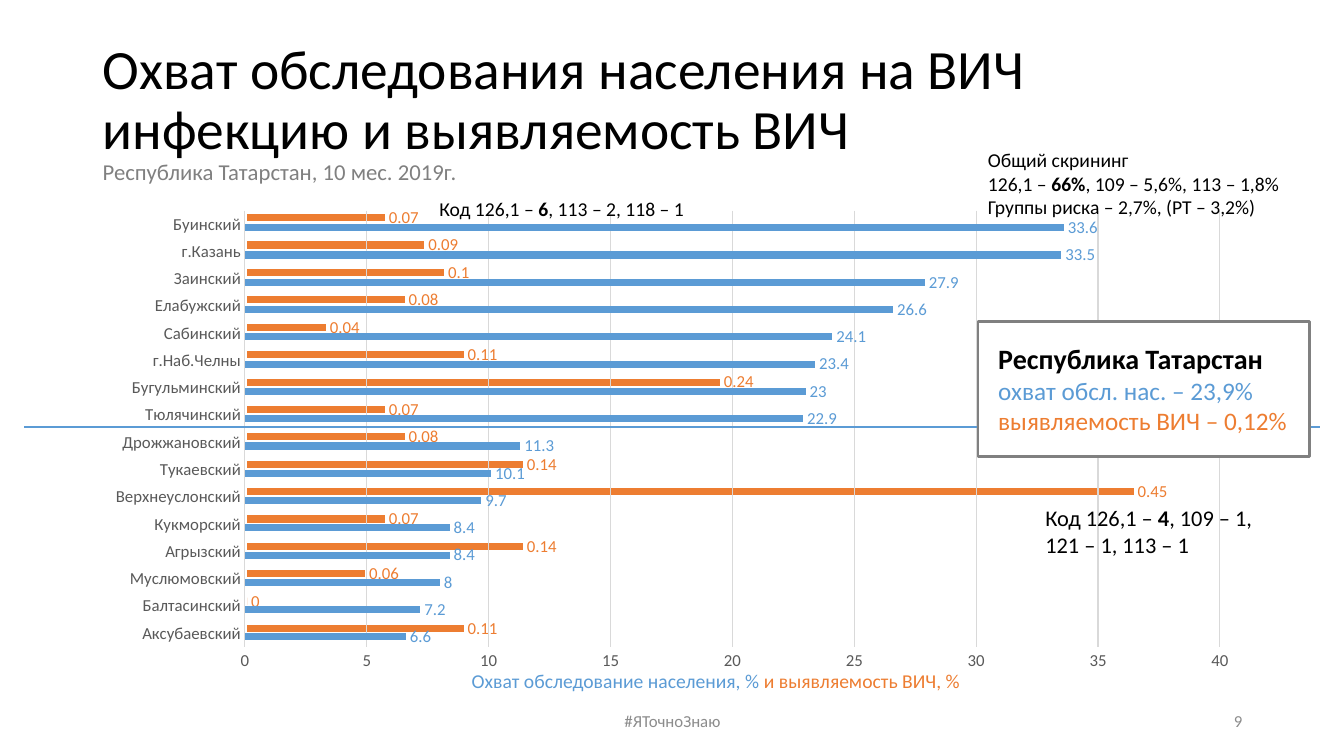
import pptx
import pptx.chart.data
import pptx.dml.color
import pptx.enum.chart
import pptx.enum.shapes
import pptx.enum.text
import pptx.oxml
import pptx.oxml.ns
import pptx.util
from pptx.util import Inches, Pt

FONT = "Calibri"
COLORS = {"black": "000000", "white": "FFFFFF", "blue": "5B9BD5", "orange": "ED7D31",
          "gray": "808080", "footer": "8C8C8C", "axis": "595959", "grid": "D9D9D9"}

# District, coverage of testing (%), detection of HIV (%); bottom to top
DISTRICTS = [
    ("Аксубаевский", 6.6, 0.11), ("Балтасинский", 7.2, 0), ("Муслюмовский", 8, 0.06),
    ("Агрызский", 8.4, 0.14), ("Кукморский", 8.4, 0.07), ("Верхнеуслонский", 9.7, 0.45),
    ("Тукаевский", 10.1, 0.14), ("Дрожжановский", 11.3, 0.08), ("Тюлячинский", 22.9, 0.07),
    ("Бугульминский", 23, 0.24), ("г.Наб.Челны", 23.4, 0.11), ("Сабинский", 24.1, 0.04),
    ("Елабужский", 26.6, 0.08), ("Заинский", 27.9, 0.1), ("г.Казань", 33.5, 0.09),
    ("Буинский", 33.6, 0.07),
]

# Paragraphs are lists of runs: (text, format that differs from the box)
TITLE = [[("Охват обследования населения на ВИЧ инфекцию и выявляемость ВИЧ\v", {}),
          ("Республика Татарстан, 10 мес. 2019г.", {"size": 16.2, "color": "gray"})]]
AXIS_TITLE = [[("Охват обследование населения, % ", {"color": "blue"}),
               ("и выявляемость ВИЧ, %", {"color": "orange"})]]
REPUBLIC = [[("Республика Татарстан", {"size": 20, "bold": True})],
            [("охват обсл. нас. – 23,9%", {"color": "blue"})],
            [("выявляемость ВИЧ – 0,12%", {"color": "orange"})]]
CODES_LOW = [[("Код 126,1 – ", {}), ("4", {"bold": True}), (", 109 – 1, 121 – 1, 113 – 1", {})]]
CODES_TOP = [[("Код 126,1 – ", {}), ("6", {"bold": True}), (", 113 – 2, 118 – 1", {})]]
SCREENING = [[("Общий скрининг", {})],
             [("126,1 – ", {}), ("66%", {"bold": True}), (", 109 – 5,6%, 113 – 1,8%", {})],
             [("Группы риска – 2,7%, (РТ – 3,2%)", {})]]

# Boxes are left, top, width, height in inches
DETECTION_AT, DETECTION_PLOT = (2.25, 1.97, 10.17, 4.52), (2.45, 2.06, 9.77, 4.35)
COVERAGE_AT, COVERAGE_PLOT = (0.92, 2, 11.5, 4.76), (2.43, 2.09, 9.67, 4.33)


def rgb(name):
    return pptx.dml.color.RGBColor.from_string(COLORS[name])


def set_font(font, size, color, bold=False):
    font.name, font.size, font.bold = FONT, Pt(size), bold
    font.color.rgb = rgb(color)


def write(tf, text, size=14, color="black", bold=False, align="LEFT", anchor="TOP",
          wrap=True, spacing=None, inset=None):
    """Fill a text frame with a string or a list of paragraphs of runs."""
    tf.word_wrap = wrap
    tf.vertical_anchor = getattr(pptx.enum.text.MSO_ANCHOR, anchor)
    if inset is not None:
        tf.margin_left = tf.margin_right = tf.margin_top = tf.margin_bottom = Inches(inset)
    paragraphs = [[(text, {})]] if isinstance(text, str) else text
    for i, runs in enumerate(paragraphs):
        p = tf.add_paragraph() if i else tf.paragraphs[0]
        p.alignment = getattr(pptx.enum.text.PP_ALIGN, align)
        p.line_spacing = spacing
        for words, changes in runs:
            pieces = words.split("\v")
            for j, piece in enumerate(pieces):
                if j:
                    p.add_line_break()
                if piece:
                    r = p.add_run()
                    r.text = piece
                    set_font(r.font, **({"size": size, "color": color, "bold": bold} | changes))


def add_text(slide, at, text, **fmt):
    write(slide.shapes.add_textbox(*map(Inches, at)).text_frame, text, **fmt)


def clear_background(chart, at, plot):
    """Make the chart see-through and pin its inner plot area to a box on the slide."""
    ns = pptx.oxml.ns.nsdecls("c", "a")
    empty = f"<c:spPr {ns}><a:noFill/><a:ln><a:noFill/></a:ln></c:spPr>"
    root = chart.element
    root.find(pptx.oxml.ns.qn("c:chart")).addnext(pptx.oxml.parse_xml(empty))
    area = root.find(".//" + pptx.oxml.ns.qn("c:plotArea"))
    area.append(pptx.oxml.parse_xml(empty))
    for old in area.findall(pptx.oxml.ns.qn("c:layout")):
        area.remove(old)
    fractions = {"x": (plot[0] - at[0]) / at[2], "y": (plot[1] - at[1]) / at[3],
                 "w": plot[2] / at[2], "h": plot[3] / at[3]}
    modes = "".join(f'<c:{k}Mode val="edge"/>' for k in "xy")
    sizes = "".join(f'<c:{k} val="{v:.4f}"/>' for k, v in fractions.items())
    area.insert(0, pptx.oxml.parse_xml(
        f'<c:layout {ns}><c:manualLayout><c:layoutTarget val="inner"/>'
        f"{modes}{sizes}</c:manualLayout></c:layout>"))


def add_bars(slide, at, plot, categories, columns, top, step):
    data = pptx.chart.data.CategoryChartData()
    data.categories = categories
    for i, values in enumerate(columns, 1):
        data.add_series(f"Series {i}", values)
    kind = pptx.enum.chart.XL_CHART_TYPE.BAR_CLUSTERED
    chart = slide.shapes.add_chart(kind, *map(Inches, at), data).chart
    chart.has_legend = chart.has_title = False
    set_font(chart.font, 10, "black")
    bars = chart.plots[0]
    bars.gap_width, bars.overlap, bars.vary_by_categories = 182, 0, False
    for series, color in zip(bars.series, ("blue", "orange")):
        series.format.fill.solid()
        series.format.fill.fore_color.rgb = rgb(color)
        labels = series.data_labels
        labels.show_value = True
        labels.position = pptx.enum.chart.XL_LABEL_POSITION.OUTSIDE_END
        set_font(labels.font, 12, color)
    axis = chart.value_axis
    axis.minimum_scale, axis.maximum_scale, axis.major_unit = 0, top, step
    axis.has_major_gridlines = False
    clear_background(chart, at, plot)
    return chart


def style_axes(chart):
    for axis in (chart.category_axis, chart.value_axis):
        axis.major_tick_mark = axis.minor_tick_mark = pptx.enum.chart.XL_TICK_MARK.NONE
        set_font(axis.tick_labels.font, 12, "axis")
    chart.value_axis.format.line.fill.background()
    chart.value_axis.has_major_gridlines = True
    for line in (chart.category_axis.format.line, chart.value_axis.major_gridlines.format.line):
        line.color.rgb, line.width = rgb("grid"), Pt(0.75)


def add_divider(slide, x1, x2, y):
    line = slide.shapes.add_connector(pptx.enum.shapes.MSO_CONNECTOR.STRAIGHT,
                                      Inches(x1), Inches(y), Inches(x2), Inches(y))
    line.line.color.rgb, line.line.width = rgb("blue"), Pt(1.5)
    line.element.spPr.append(pptx.oxml.parse_xml(
        f'<a:effectLst {pptx.oxml.ns.nsdecls("a")}/>'))


def add_panel(slide, at, text, **fmt):
    sp = slide.shapes.add_shape(pptx.enum.shapes.MSO_SHAPE.RECTANGLE, *map(Inches, at))
    sp.shadow.inherit = False
    sp.fill.solid()
    sp.fill.fore_color.rgb = rgb("white")
    sp.line.color.rgb, sp.line.width = rgb("gray"), Pt(2)
    write(sp.text_frame, text, **fmt)


def main():
    prs = pptx.Presentation()
    prs.slide_width, prs.slide_height = Inches(13.33), Inches(7.5)
    slide = prs.slides.add_slide(prs.slide_layouts[6])

    names, coverage, detection = zip(*DISTRICTS)
    blank = [None] * len(names)  # keeps the other chart's bar slot free
    numbers = [str(n) for n in range(1, len(names) + 1)]
    back = add_bars(slide, DETECTION_AT, DETECTION_PLOT, numbers, (blank, detection), 0.5, 0.1)
    back.category_axis.visible = back.value_axis.visible = False
    add_text(slide, (0.92, 0.4, 11.5, 1.45), TITLE, size=39.6, anchor="MIDDLE", spacing=0.9)
    style_axes(add_bars(slide, COVERAGE_AT, COVERAGE_PLOT, names, (coverage, blank), 40, 5))

    add_divider(slide, 0.24, 13.09, 4.24)
    add_text(slide, (4.58, 6.59, 5.08, 0.34), AXIS_TITLE, wrap=False)
    add_panel(slide, (9.7, 3.19, 3.29, 1.34), REPUBLIC, size=18, wrap=False, inset=0.2)
    footer = {"size": 12, "color": "footer", "anchor": "MIDDLE"}
    add_text(slide, (4.42, 6.95, 4.5, 0.4), "#ЯТочноЗнаю", align="CENTER", **footer)
    add_text(slide, (9.42, 6.95, 3, 0.4), "9", align="RIGHT", **footer)
    add_text(slide, (10.27, 4.95, 2.3, 0.64), CODES_LOW, size=16)
    add_text(slide, (4.26, 1.9, 3.14, 0.34), CODES_TOP)
    add_text(slide, (9.7, 1.42, 3.14, 0.81), SCREENING)
    prs.save("out.pptx")


if __name__ == "__main__":
    main()
